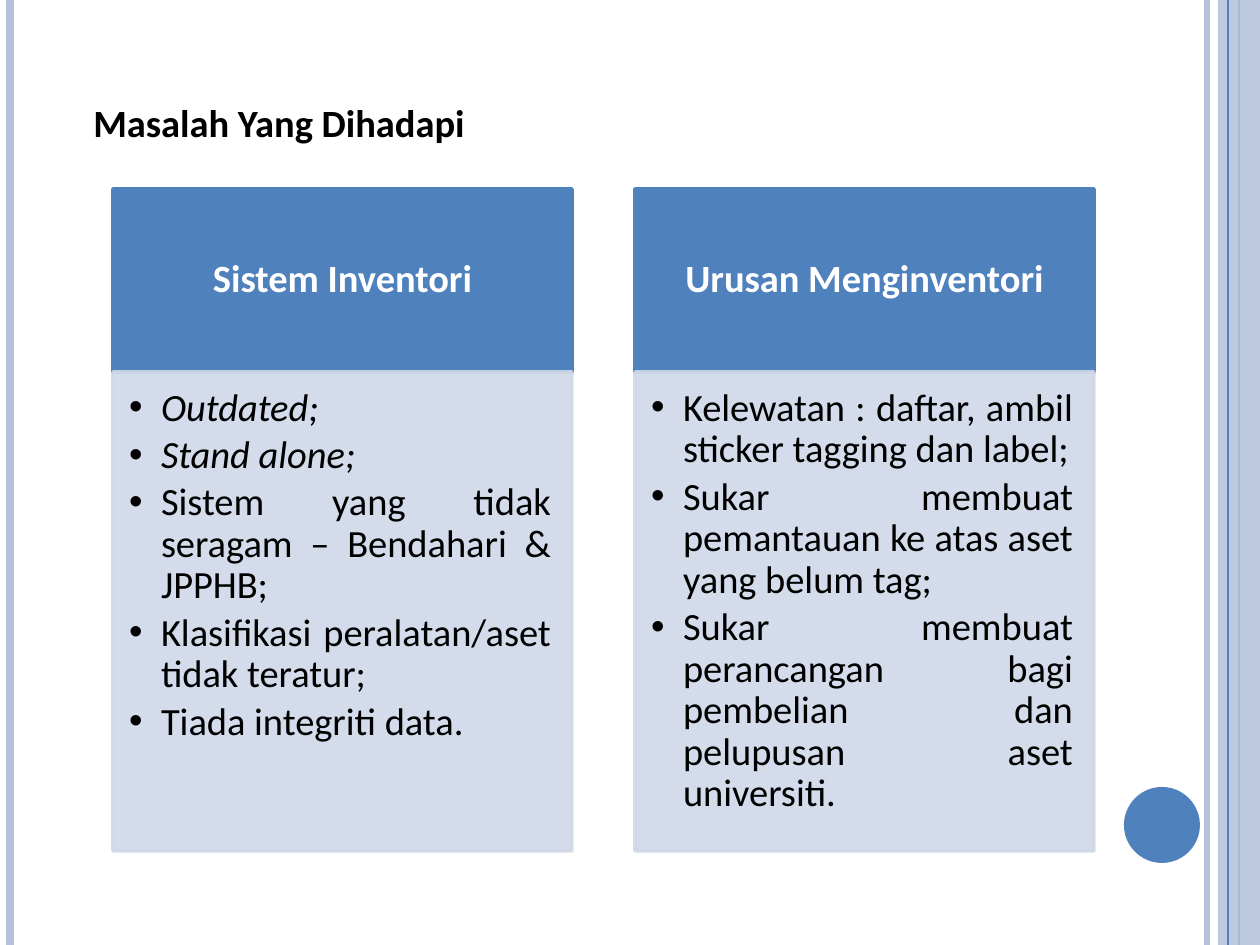
from lxml import etree
from pptx import Presentation
from pptx.dml.color import RGBColor
from pptx.enum.shapes import MSO_CONNECTOR, MSO_SHAPE
from pptx.enum.text import MSO_ANCHOR, PP_ALIGN
from pptx.oxml.ns import qn
from pptx.util import Emu, Pt

RECT, OVAL, STRAIGHT = MSO_SHAPE.RECTANGLE, MSO_SHAPE.OVAL, MSO_CONNECTOR.STRAIGHT
CENTER, JUSTIFY = PP_ALIGN.CENTER, PP_ALIGN.JUSTIFY
TOP, MIDDLE = MSO_ANCHOR.TOP, MSO_ANCHOR.MIDDLE

BLUE = RGBColor(0x4F, 0x81, 0xBD)
PALE_BLUE = RGBColor(0xB3, 0xC1, 0xDB)
PANEL = RGBColor(0xD0, 0xD8, 0xE8)
BLACK = RGBColor(0, 0, 0)
WHITE = RGBColor(0xFF, 0xFF, 0xFF)

PX = 914400 / 126
W, H = 1260, 945

prs = Presentation()
prs.slide_width, prs.slide_height = Emu(round(W * PX)), Emu(round(H * PX))
s = prs.slides.add_slide(prs.slide_layouts[6])


def add_box(kind, box, color, opacity=100, border=0):
    """Filled shape at box (px); the border shares the fill's colour and opacity."""
    sp = s.shapes.add_shape(kind, *(Emu(round(v * PX)) for v in box))
    sp.shadow.inherit = False
    sp.fill.solid()
    sp.fill.fore_color.rgb = color
    if border:
        sp.line.color.rgb = color
        sp.line.width = Pt(border)
    else:
        sp.line.fill.background()
    if opacity < 100:
        for clr in sp._element.spPr.iter(qn("a:srgbClr")):
            etree.SubElement(clr, qn("a:alpha"), val=str(opacity * 1000))
    return sp


def add_run(p, text, color, bold=False, italic=False):
    r = p.add_run()
    r.text = text
    r.font.name, r.font.size = "Calibri", Pt(22)
    r.font.bold, r.font.italic = bold, italic
    r.font.color.rgb = color


# Edge lines, with the translucent band above the first three
edge_lines = [(1207, PALE_BLUE, 3), (10, PALE_BLUE, 4.5), (1239, BLUE, 1.5), (1228, BLUE, 0.75)]
for x, color, width in edge_lines:
    if x == 1228:
        add_box(RECT, (1218, 0, 42, H), PALE_BLUE, opacity=87)
    line = s.shapes.add_connector(STRAIGHT, *(Emu(round(v * PX)) for v in (x, 0, x, H)))
    line.line.color.rgb = color
    line.line.width = Pt(width)
    etree.SubElement(line._element.spPr, qn("a:effectLst"))

add_box(OVAL, (1124, 787, 76, 76), BLUE)

# Title
title = s.shapes.add_textbox(*(Emu(round(v * PX)) for v in (81, 93, 1087, 60)))
tf = title.text_frame
tf.word_wrap = True
add_run(tf.paragraphs[0], "Masalah Yang Dihadapi", BLACK, bold=True)

# Two columns: a heading above a list of (text, italic)
columns = [
    ("Sistem Inventori", [
        ("Outdated;", True),
        ("Stand alone;", True),
        ("Sistem yang tidak seragam – Bendahari & JPPHB;", False),
        ("Klasifikasi peralatan/aset tidak teratur;", False),
        ("Tiada integriti data.", False),
    ]),
    ("Urusan Menginventori", [
        ("Kelewatan : daftar, ambil sticker tagging dan label;", False),
        ("Sukar membuat pemantauan ke atas aset yang belum tag;", False),
        ("Sukar membuat perancangan bagi pembelian dan pelupusan aset universiti.", False),
    ]),
]
LEFT, STEP, COL_W = 113, 522, 459
INDENT = round(32 * PX)

for i, (heading, items) in enumerate(columns):
    x = LEFT + i * STEP
    head = add_box(RECT, (x, 189, COL_W, 183), BLUE, border=2)
    body = add_box(RECT, (x, 372, COL_W, 479), PANEL, opacity=90, border=2)
    for sp, anchor, insets in ((head, MIDDLE, (21, 13, 21, 13)), (body, TOP, (16, 16, 21, 24))):
        tf = sp.text_frame
        tf.word_wrap = True
        tf.vertical_anchor = anchor
        tf.margin_left, tf.margin_top, tf.margin_right, tf.margin_bottom = (
            Emu(round(v * PX)) for v in insets)

    p = head.text_frame.paragraphs[0]
    p.alignment, p.line_spacing = CENTER, 0.9
    add_run(p, heading, WHITE, bold=True)

    tf = body.text_frame
    for n, (text, italic) in enumerate(items):
        p = tf.add_paragraph() if n else tf.paragraphs[0]
        p.alignment, p.line_spacing, p.space_after = JUSTIFY, 0.9, Pt(3.3)
        pPr = p._p.get_or_add_pPr()
        pPr.set("marL", str(INDENT))
        pPr.set("indent", str(-INDENT))
        etree.SubElement(pPr, qn("a:buFont"), typeface="Arial")
        etree.SubElement(pPr, qn("a:buChar"), char="•")
        add_run(p, text, BLACK, italic=italic)

prs.save("out.pptx")
